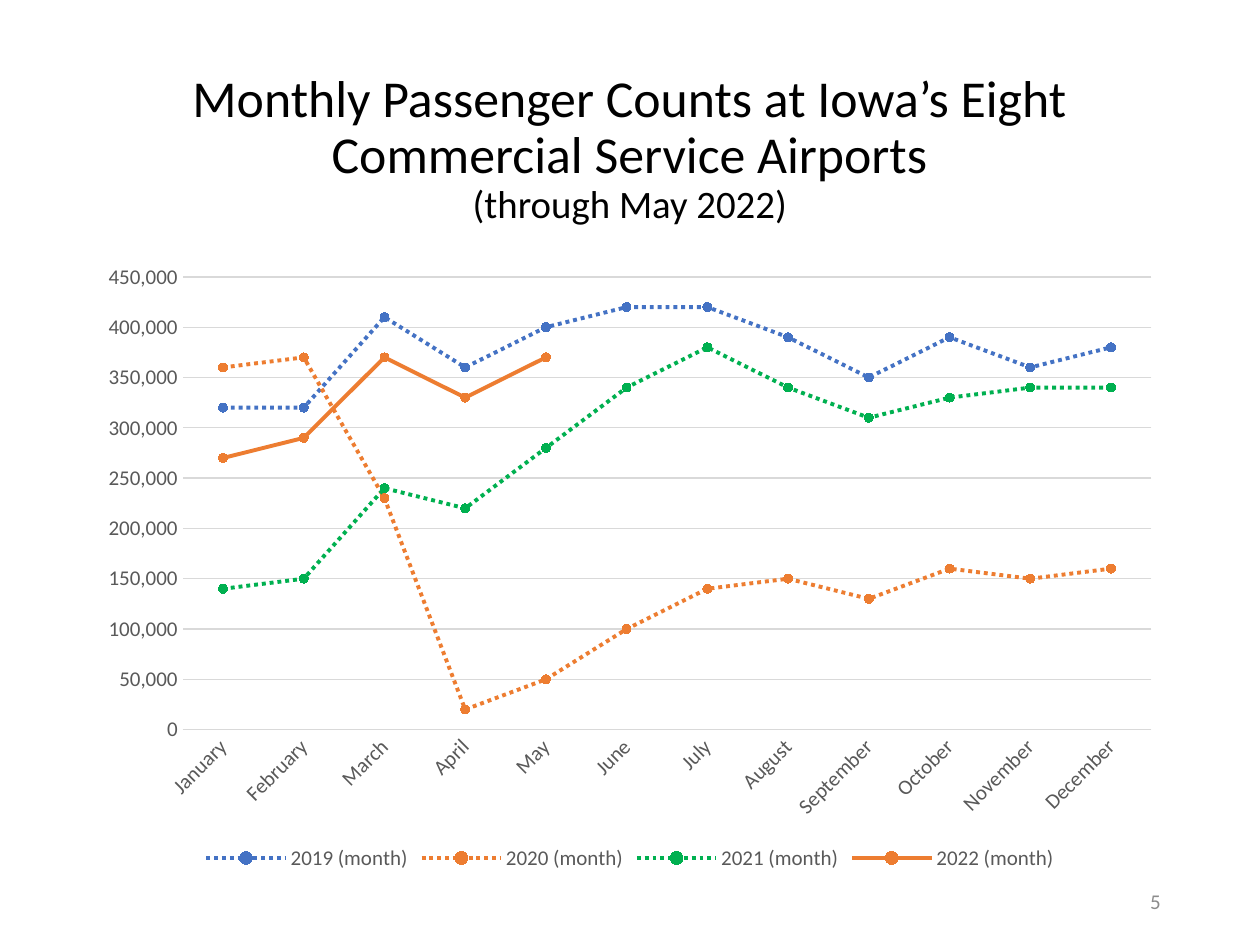
import pptx
import pptx.chart.data
import pptx.dml.color
import pptx.enum.chart
import pptx.enum.dml
import pptx.enum.text
import pptx.util

Cm, Pt = pptx.util.Cm, pptx.util.Pt
enum = pptx.enum


def paint(hue):
    return pptx.dml.color.RGBColor.from_string(hue)


def style(font, size, hue):
    for key, val in {"name": "Calibri", "size": Pt(size), "bold": False}.items():
        setattr(font, key, val)
    font.color.rgb = paint(hue)


deck = pptx.Presentation()
deck.slide_width, deck.slide_height = Cm(25.4), Cm(19.05)
slide = deck.slides.add_slide(deck.slide_layouts[6])

# Monthly counts, in thousands
months = ["January", "February", "March", "April", "May", "June", "July",
          "August", "September", "October", "November", "December"]
years = [
    ("2019", "4472C4", [320, 320, 410, 360, 400, 420, 420, 390, 350, 390, 360, 380]),
    ("2020", "ED7D31", [360, 370, 230, 20, 50, 100, 140, 150, 130, 160, 150, 160]),
    ("2021", "00B050", [140, 150, 240, 220, 280, 340, 380, 340, 310, 330, 340, 340]),
    ("2022", "ED7D31", [270, 290, 370, 330, 370] + [None] * 7),
]
data = pptx.chart.data.CategoryChartData(number_format="#,##0")
data.categories = months
for year, hue, counts in years:
    data.add_series(f"{year} (month)", [n and n * 1000 for n in counts])

# Line chart
chart = slide.shapes.add_chart(
    enum.chart.XL_CHART_TYPE.LINE_MARKERS,
    Cm(1.75), Cm(5.08), Cm(21.9), Cm(12.57), data).chart
style(chart.font, 10, "000000")
chart.has_title = False
chart.has_legend = True
legend = chart.legend
legend.position = enum.chart.XL_LEGEND_POSITION.BOTTOM
legend.include_in_layout = False
style(legend.font, 12, "595959")
chart.plots[0].vary_by_categories = False

for line, (year, hue, counts) in zip(chart.plots[0].series, years):
    line.smooth = False
    line.format.line.width = Pt(2.25)
    line.format.line.color.rgb = paint(hue)
    if year != "2022":
        line.format.line.dash_style = enum.dml.MSO_LINE.ROUND_DOT
    mark = line.marker
    mark.style = enum.chart.XL_MARKER_STYLE.CIRCLE
    mark.size = 5
    mark.format.fill.solid()
    mark.format.fill.fore_color.rgb = paint(hue)
    mark.format.line.color.rgb = paint(hue)

# Axes
base, scale = chart.category_axis, chart.value_axis
for axis in (base, scale):
    axis.major_tick_mark = axis.minor_tick_mark = enum.chart.XL_TICK_MARK.NONE
    style(axis.tick_labels.font, 12, "595959")
for key, val in {"minimum_scale": 0, "maximum_scale": 450000,
                 "major_unit": 50000, "has_major_gridlines": True}.items():
    setattr(scale, key, val)
scale.tick_labels.number_format = "#,##0"
scale.tick_labels.number_format_is_linked = False
scale.format.line.fill.background()
for rule in (base.format.line, scale.major_gridlines.format.line):
    rule.width = Pt(0.75)
    rule.color.rgb = paint("D9D9D9")
# Slant the month names by 45 degrees
base._element.txPr.bodyPr.set("rot", "-2700000")

# Title and page number
align, anchor = enum.text.PP_ALIGN, enum.text.MSO_ANCHOR
texts = [
    ((1.75, 1.02, 21.9, 3.68), anchor.BOTTOM, align.CENTER, 0.9, "000000",
     [("Monthly Passenger Counts at Iowa’s Eight Commercial Service Airports", 29.6),
      ("(through May 2022)", 22.2)]),
    ((17.93, 17.65, 5.72, 1.02), anchor.MIDDLE, align.RIGHT, 1.0, "8C8C8C",
     [("5", 12)]),
]
for place, fix, side, space, hue, rows in texts:
    frame = slide.shapes.add_textbox(*map(Cm, place)).text_frame
    frame.word_wrap = True
    frame.vertical_anchor = fix
    for i, (words, size) in enumerate(rows):
        para = frame.add_paragraph() if i else frame.paragraphs[0]
        para.alignment, para.line_spacing = side, space
        run = para.add_run()
        run.text = words
        style(run.font, size, hue)

deck.save("out.pptx")
